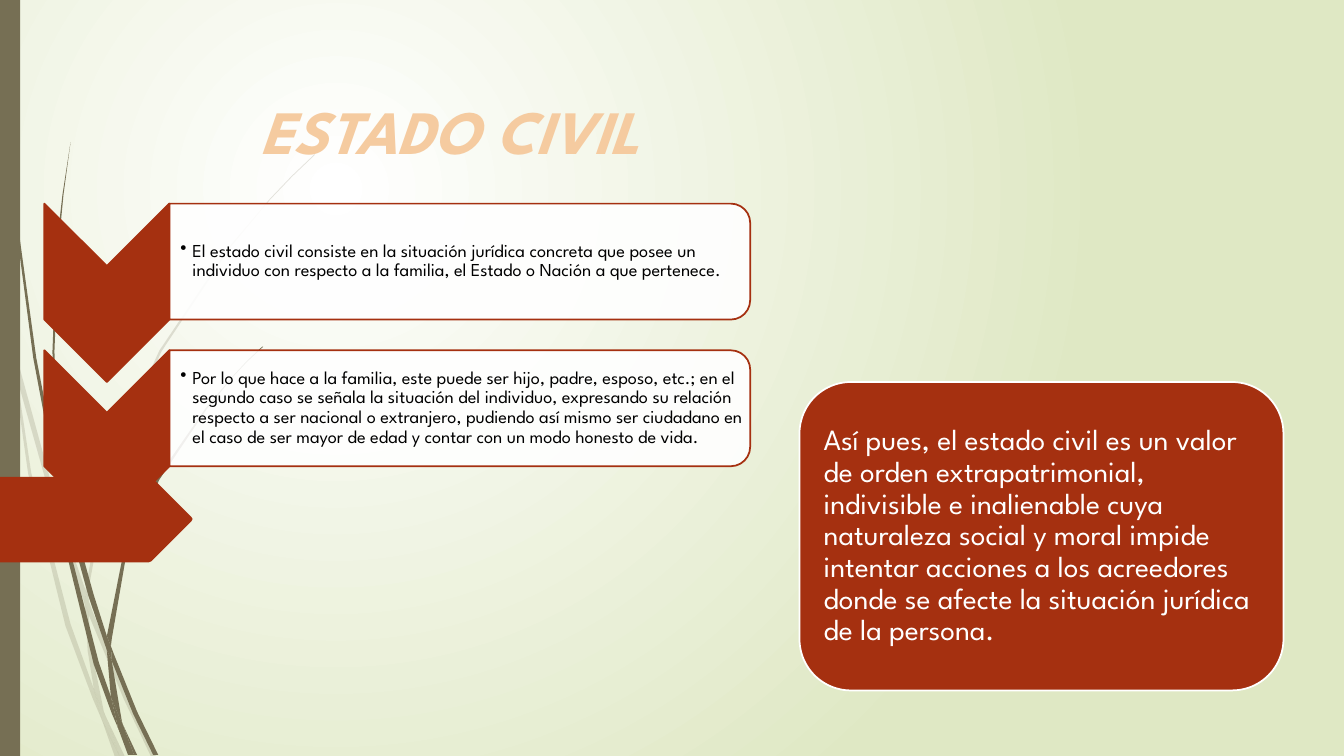
from dataclasses import dataclass
from lxml import etree
from pptx import Presentation, util as u
from pptx.dml.color import RGBColor
from pptx.enum import shapes, text
from pptx.oxml.ns import qn


@dataclass(frozen=True)
class Theme:
    font: str = "League Spartan"
    rust: str = "A53010"
    olive: str = "766F54"
    white: str = "FFFFFF"
    black: str = "000000"
    meadow: str = "DFE8C4"
    peach: str = "F5CBA0"
    orange: str = "DE7E18"
    title: int = 44
    detail: int = 13
    conclusion: int = 21
    line: float = 1.25


# Content
TITLE = "ESTADO CIVIL"
STEPS = [
    "El estado civil consiste en la situación jurídica concreta que posee un individuo "
    "con respecto a la familia, el Estado o Nación a que pertenece.",
    "Por lo que hace a la familia, este puede ser hijo, padre, esposo, etc.; en el segundo "
    "caso se señala la situación del individuo, expresando su relación respecto a ser "
    "nacional o extranjero, pudiendo así mismo ser ciudadano en el caso de ser mayor de "
    "edad y contar con un modo honesto de vida.",
]
CONCLUSION = (
    "Así pues, el estado civil es un valor de orden extrapatrimonial, indivisible e "
    "inalienable cuya naturaleza social y moral impide intentar acciones a los acreedores "
    "donde se afecte la situación jurídica de la persona."
)

# Outlines, in hundredths of an inch
PALE_GRASS = [
    [(11, 350), (9, 322), (0, 282), (0, 299), (10, 344)],
    [(58, 522), (84, 599), (85, 586), (62, 520), (14, 345), (17, 376)],
    [(92, 607), (88, 596), (88, 610), (123, 694), (150, 751), (155, 751), (127, 692)],
    [(119, 751), (124, 751), (105, 711)],
    [(93, 683), (70, 619), (31, 469), (17, 376), (11, 350), (28, 470), (65, 621),
     (92, 693), (101, 714), (99, 707)],
    [(84, 599), (87, 646), (93, 683), (96, 692), (105, 711), (103, 706), (91, 646),
     (88, 610), (88, 608)],
    [(88, 584), (110, 462), (160, 349), (229, 245), (268, 198), (290, 175), (312, 154),
     (312, 153), (289, 175), (268, 197), (228, 244), (158, 348), (107, 461), (85, 584),
     (85, 586), (88, 596)],
    [(101, 714), (114, 751), (119, 751)],
    [(88, 608), (88, 610), (88, 596), (85, 586), (84, 599)],
    [(96, 692), (93, 683), (99, 707), (101, 714), (119, 751), (105, 711)],
]
DARK_GRASS = [
    [(7, 110), (17, 233), (33, 355), (56, 477), (57, 481), (55, 457), (55, 453), (36, 355),
     (19, 232), (8, 109), (5, 48), (4, 0), (3, 0), (4, 48)],
    [(88, 592), (106, 645), (106, 633), (106, 631), (93, 590), (60, 472), (64, 505)],
    [(113, 649), (110, 641), (111, 656), (132, 708), (152, 749), (157, 749), (136, 706)],
    [(110, 691), (98, 657), (72, 556), (64, 505), (57, 477), (68, 557), (93, 659),
     (111, 708), (117, 722), (116, 717)],
    [(60, 472), (58, 453), (54, 349), (58, 245), (63, 193), (70, 141), (62, 193),
     (56, 245), (52, 349), (55, 449)],
    [(133, 749), (136, 749), (122, 719)],
    [(57, 477), (64, 505), (60, 472), (55, 449), (55, 453)],
    [(111, 633), (125, 552), (158, 476), (205, 406), (231, 374), (245, 359), (261, 344),
     (260, 344), (245, 358), (231, 373), (204, 405), (156, 474), (122, 551), (106, 631),
     (110, 641)],
    [(117, 722), (127, 749), (131, 749)],
    [(106, 645), (110, 691), (116, 706), (122, 719), (121, 716), (111, 656), (109, 651)],
    [(106, 645), (109, 651), (111, 656), (110, 641), (106, 631), (106, 633)],
    [(116, 706), (110, 691), (116, 717), (117, 722), (130, 749), (133, 749), (122, 719)],
]
PAGE_ARROW = [(0, 473), (147, 473), (150, 474), (151, 474), (190, 513), (191, 515),
              (190, 517), (151, 556), (150, 557), (147, 558), (0, 558)]

T = Theme()
prs = Presentation()
prs.slide_width, prs.slide_height = u.Inches(13.33), u.Inches(7.5)
slide = prs.slides.add_slide(prs.slide_layouts[6])


def paint(shape, fill, line=None, opacity=100):
    shape.shadow.inherit = False
    shape.fill.solid()
    shape.fill.fore_color.rgb = RGBColor.from_string(fill)
    if opacity < 100:
        color = shape.element.spPr.find(qn("a:solidFill"))[0]
        etree.SubElement(color, qn("a:alpha"), val=str(opacity * 1000))
    if line:
        shape.line.color.rgb = RGBColor.from_string(line)
        shape.line.width = u.Pt(T.line)
    else:
        shape.line.fill.background()


def outline(parent, points, fill, opacity=100):
    builder = parent.build_freeform(*points[0], scale=u.Inches(0.01))
    builder.add_line_segments(points[1:], close=True)
    paint(builder.convert_to_shape(), fill, opacity=opacity)


def preset(kind, box, fill, line=None, opacity=100, turn=0):
    """Place a preset; box is its size as seen after a quarter turn."""
    left, top, width, height = box
    if turn:
        left, top = left + (width - height) / 2, top + (height - width) / 2
        width, height = height, width
    shape = slide.shapes.add_shape(kind, *map(u.Inches, (left, top, width, height)))
    shape.rotation = turn
    paint(shape, fill, line, opacity)


def write(words, box, size, color, insets, anchor=text.MSO_ANCHOR.MIDDLE):
    frame = slide.shapes.add_textbox(*map(u.Inches, box)).text_frame
    frame.word_wrap = True
    frame.vertical_anchor = anchor
    (frame.margin_left, frame.margin_top,
     frame.margin_right, frame.margin_bottom) = map(u.Inches, insets)
    paragraph = frame.paragraphs[0]
    run = paragraph.add_run()
    run.text = words
    run.font.name, run.font.size = T.font, u.Pt(size)
    run.font.color.rgb = RGBColor.from_string(color)
    return paragraph, run


# Background glow
glow = slide.background.fill
glow.gradient()
for stop, color, position in zip(glow.gradient_stops, (T.white, T.meadow), (0, 1)):
    stop.color.rgb, stop.position = RGBColor.from_string(color), position
gradient = slide.element.find(".//" + qn("a:gradFill"))
gradient.remove(gradient.find(qn("a:lin")))
circle = etree.SubElement(gradient, qn("a:path"), path="circle")
etree.SubElement(circle, qn("a:fillToRect"), l="50000", t="50000", r="100000", b="100000")

# Grass, side bar and page arrow
for blades, opacity in ((PALE_GRASS, 20), (DARK_GRASS, 100)):
    tuft = slide.shapes.add_group_shape().shapes
    for blade in blades:
        outline(tuft, blade, T.olive, opacity)
preset(shapes.MSO_SHAPE.RECTANGLE, (0, 0, 0.2, 7.5), T.olive)
outline(slide.shapes, PAGE_ARROW, T.rust)

# Title
_, title = write(TITLE, (2.49, 0.91, 8.5, 0.79), T.title, T.peach,
                 (0.1, 0.05, 0.1, 0.05), text.MSO_ANCHOR.BOTTOM)
title.font.bold = title.font.italic = True
edge = etree.Element(qn("a:ln"), w=str(u.Pt(1.75)))
etree.SubElement(etree.SubElement(edge, qn("a:solidFill")), qn("a:srgbClr"), val=T.orange)
title.font._element.insert(0, edge)

# Chevron steps
STEP_LEFT, STEP_TOP, STEP_PITCH = 0.44, 2.02, 1.455
CHEVRON_W, CHEVRON_H, PANEL_W, PANEL_H = 1.24, 1.77, 5.76, 1.15
panel_left = STEP_LEFT + CHEVRON_W
for row, words in enumerate(STEPS):
    top = STEP_TOP + row * STEP_PITCH
    preset(shapes.MSO_SHAPE.CHEVRON, (STEP_LEFT, top, CHEVRON_W, CHEVRON_H),
           T.rust, T.rust, turn=90)
    preset(shapes.MSO_SHAPE.ROUND_2_SAME_RECTANGLE, (panel_left, top, PANEL_W, PANEL_H),
           T.white, T.rust, opacity=90, turn=90)
    detail, _ = write(words, (panel_left + 0.01, top + 0.05, 5.7, 1.04), T.detail, T.black,
                      (0.1, 0.01, 0.01, 0.01))
    detail.line_spacing, detail.space_after = 0.9, u.Pt(T.detail * 0.15)
    layout = detail._p.get_or_add_pPr()
    layout.set("marL", str(u.Inches(0.12)))
    layout.set("indent", str(-u.Inches(0.12)))
    etree.SubElement(layout, qn("a:buChar"), char="•")

# Conclusion card
card, pad = (7.93, 3.79, 4.8, 3.06), 0.15
preset(shapes.MSO_SHAPE.ROUNDED_RECTANGLE, card, T.rust, T.white)
inner = (card[0] + pad, card[1] + pad, card[2] - 2 * pad, card[3] - 2 * pad)
conclusion, _ = write(CONCLUSION, inner, T.conclusion, T.white, (0.09,) * 4)
conclusion.line_spacing, conclusion.space_after = 0.9, u.Pt(T.conclusion * 0.35)

prs.save("out.pptx")
